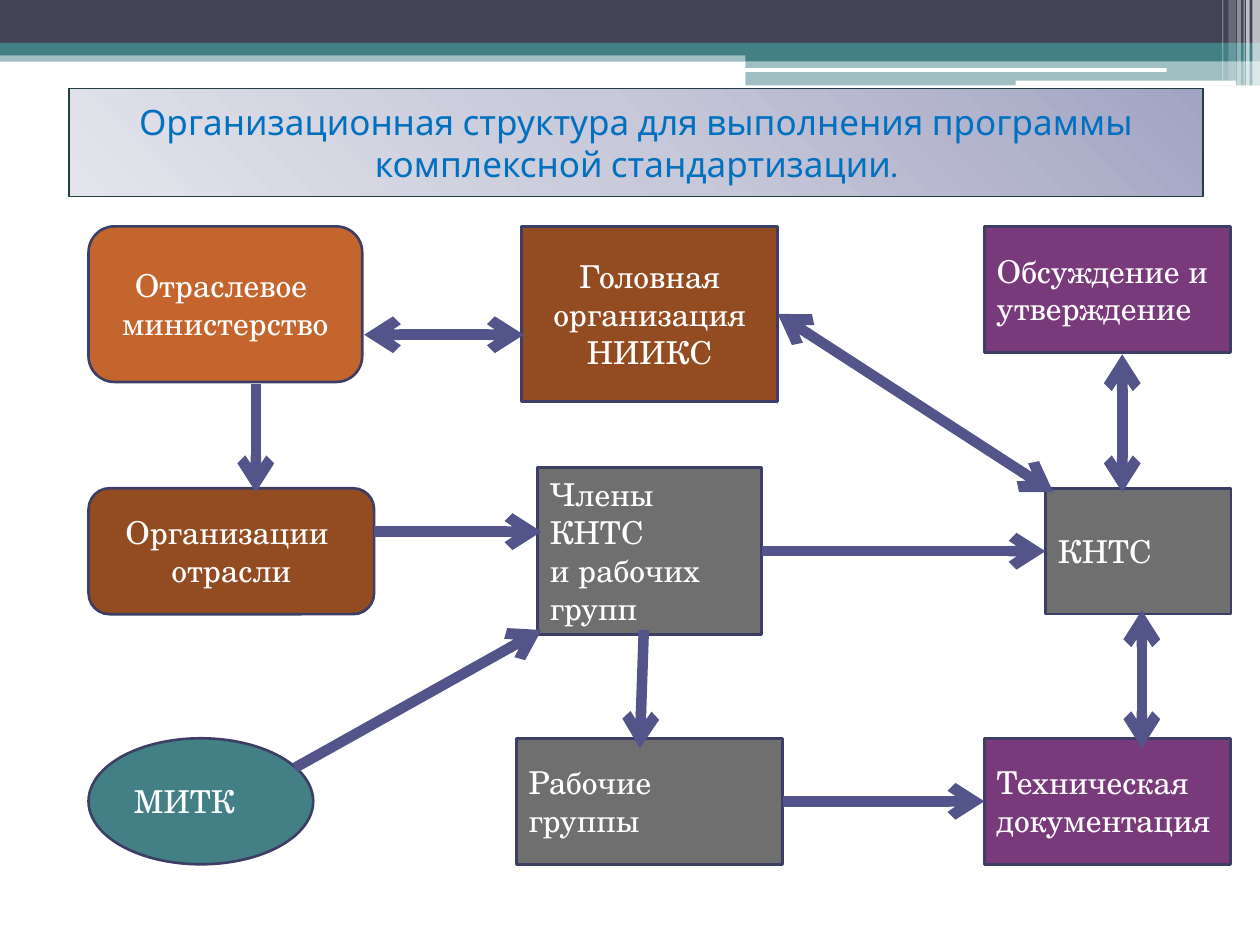
from copy import deepcopy
from lxml.etree import SubElement
from pptx import Presentation
from pptx.dml.color import RGBColor
from pptx.enum.shapes import MSO_CONNECTOR, MSO_SHAPE
from pptx.enum.text import MSO_ANCHOR, MSO_AUTO_SIZE, PP_ALIGN
from pptx.oxml.ns import qn
from pptx.util import Pt

RECT, ROUND, OVAL = MSO_SHAPE.RECTANGLE, MSO_SHAPE.ROUNDED_RECTANGLE, MSO_SHAPE.OVAL
LEFT, MID = PP_ALIGN.LEFT, PP_ALIGN.CENTER
TEAL, WHITE, EDGE, ARROW = "438086", "FFFFFF", "3D3E66", "53548A"
RUST, BROWN, GREY, PLUM = "C4652D", "934C22", "6F6F6F", "783A7A"


def rgb(code):
    return RGBColor.from_string(code)


def block(kind, box, color):
    shape = slide.shapes.add_shape(kind, *[Pt(v) for v in box])
    shape.shadow.inherit = False
    shape.fill.solid()
    shape.fill.fore_color.rgb = rgb(color)
    return shape


prs = Presentation()
prs.slide_width, prs.slide_height = Pt(720), Pt(540)
slide = prs.slides.add_slide(prs.slide_layouts[5])

# Header bands and stripes: kind, box, colour, opacity in percent
bands = [
    (RECT, (0, 28.8, 720, 6.5), TEAL, 50),
    (RECT, (0, 0, 720, 24.5), "424456", 100),
    (RECT, (0, 24.5, 720, 7.2), TEAL, 100),
    (RECT, (426, 28.1, 294, 6.8), TEAL, 100),
    (RECT, (426, 34.6, 294, 14.2), TEAL, 50),
    (ROUND, (425.5, 38.9, 241.2, 2.2), WHITE, 100),
    (ROUND, (580.3, 46.1, 126, 2.9), WHITE, 100),
    (RECT, (715.7, 0, 4.3, 49), WHITE, 65),
    (RECT, (712.1, 0, 2.1, 49), WHITE, 65),
    (RECT, (710.6, 0, 0.7, 49), WHITE, 60),
    (RECT, (707, 0, 2.1, 49), WHITE, 40),
    (RECT, (702, 0, 4.3, 46.1), WHITE, 20),
    (RECT, (698.4, 0, 0.7, 46.1), WHITE, 30),
]
for kind, box, color, alpha in bands:
    band = block(kind, box, color)
    band.line.fill.background()
    if alpha < 100:
        tint = band.fill._xPr.find(".//" + qn("a:srgbClr"))
        SubElement(tint, qn("a:alpha"), val=str(alpha * 1000))

# Title, raised above the bands
title = slide.shapes.title
slide.shapes._spTree.append(title._element)
title.left, title.top, title.width, title.height = Pt(39.4), Pt(50.4), Pt(648), Pt(61.9)
title.fill.gradient()
title.fill.gradient_angle = 225
stops = title.fill._fill._gradFill.find(qn("a:gsLst"))
stops.insert(1, deepcopy(stops[0]))
shades = [(0, "A3A4C3"), (0.5, "C7C8D9"), (1, "E4E4EC")]
for stop, (place, color) in zip(title.fill.gradient_stops, shades):
    stop.position = place
    stop.color.rgb = rgb(color)
title.line.color.rgb = rgb("224043")
title.line.width = Pt(0.75)
frame = title.text_frame
frame.word_wrap = True
frame.auto_size = MSO_AUTO_SIZE.NONE
frame.vertical_anchor = MSO_ANCHOR.MIDDLE
para = frame.paragraphs[0]
para.alignment = MID
run = para.add_run()
run.text = "Организационная структура для выполнения программы комплексной стандартизации."
run.font.name, run.font.size = "Karla", Pt(20)
run.font.color.rgb = rgb("0070C0")

# Organisation boxes: kind, box, colour, alignment, paragraphs
boxes = [
    (ROUND, (50.6, 129.4, 156.4, 88.9), RUST, MID, ["Отраслевое ", "министерство"]),
    (RECT, (298, 129.4, 146.4, 100.1), BROWN, MID, ["Головная организация", "НИИКС"]),
    (RECT, (597.4, 279, 106, 72), GREY, LEFT, ["КНТС"]),
    (RECT, (562.5, 129.4, 140.6, 72), PLUM, LEFT, ["Обсуждение и", "утверждение"]),
    (RECT, (562.5, 421.9, 140.6, 72), PLUM, LEFT, ["Техническая", "документация"]),
    (RECT, (295, 421.9, 152.2, 72), GREY, LEFT, ["Рабочие группы"]),
    (ROUND, (50.6, 279, 163.2, 72), BROWN, MID, ["Организации ", "отрасли"]),
    (OVAL, (50.6, 421.9, 128.4, 72), TEAL, LEFT, ["МИТК"]),
    (RECT, (307.1, 267, 128.2, 95.8), GREY, LEFT, ["Члены КНТС", "и рабочих", "групп"]),
]
for kind, box, color, align, lines in boxes:
    shape = block(kind, box, color)
    shape.line.color.rgb = rgb(EDGE)
    shape.line.width = Pt(1.5)
    frame = shape.text_frame
    frame.word_wrap = True
    frame.vertical_anchor = MSO_ANCHOR.MIDDLE
    for i, line in enumerate(lines):
        para = frame.add_paragraph() if i else frame.paragraphs[0]
        para.alignment = align
        run = para.add_run()
        run.text = line
        run.font.name, run.font.size = "TeX Gyre Schola", Pt(18)
        run.font.color.rgb = rgb(WHITE)

# Arrows: start, end, and whether both ends have heads
arrows = [
    ((146.2, 219.4), (146.2, 281.3), False),
    ((213.8, 303.8), (309.4, 303.8), False),
    ((168.5, 438.8), (309.4, 360), False),
    ((447.2, 457.9), (562.5, 457.9), False),
    ((435.4, 315), (597.4, 315), False),
    ((367.9, 360), (365.6, 427.5), False),
    ((208.1, 191.3), (299.3, 191.3), True),
    ((444.4, 179.4), (601.9, 281.3), True),
    ((641.3, 202.5), (641.3, 281.3), True),
    ((652.5, 348.8), (652.5, 427.5), True),
]
for start, end, both in arrows:
    link = slide.shapes.add_connector(
        MSO_CONNECTOR.STRAIGHT, *[Pt(v) for v in start + end])
    link.line.color.rgb = rgb(ARROW)
    link.line.width = Pt(6)
    pen = link.line._get_or_add_ln()
    for tag in ["a:headEnd", "a:tailEnd"] if both else ["a:tailEnd"]:
        SubElement(pen, qn(tag), type="arrow")
    SubElement(link._element.spPr, qn("a:effectLst"))

prs.save("out.pptx")
